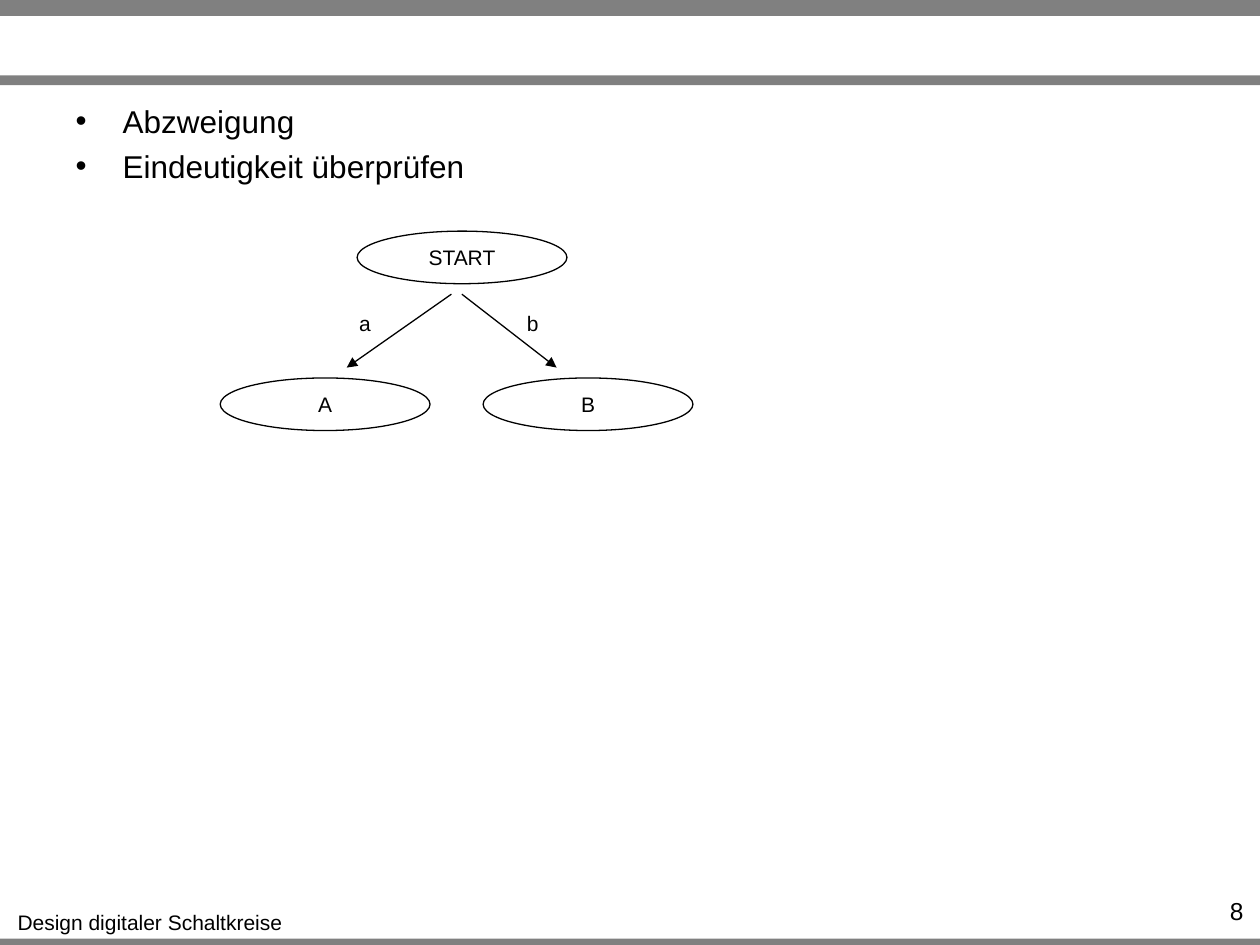
from dataclasses import dataclass

from lxml import etree
from pptx import Presentation
from pptx.dml.color import RGBColor
from pptx.enum import shapes, text
from pptx.oxml import ns
from pptx.util import Cm, Pt

BLACK = RGBColor(0x00, 0x00, 0x00)
GREY = RGBColor(0x80, 0x80, 0x80)
FONT = "Arial"
SLIDE_WIDTH, SLIDE_HEIGHT = 25.4, 19.05
STATE_WIDTH, STATE_HEIGHT = 4.23, 1.06
BULLET_INDENT = Cm(0.95)


@dataclass
class Bar:
    top: float
    height: float


@dataclass
class State:
    name: str
    left: float
    top: float


@dataclass
class Transition:
    start: tuple[float, float]
    end: tuple[float, float]


@dataclass
class Label:
    wording: str
    left: float
    top: float
    width: float
    height: float
    size: int = 12
    alignment: text.PP_ALIGN = text.PP_ALIGN.CENTER
    wrap: bool = False


BARS = [Bar(18.92, 0.13), Bar(0, 0.32), Bar(1.52, 0.2)]
BULLETS = ["Abzweigung", "Eindeutigkeit überprüfen"]
STATES = [State("START", 7.2, 4.66), State("A", 4.44, 7.62), State("B", 9.74, 7.62)]
TRANSITIONS = [
    Transition((9.1, 5.93), (6.99, 7.41)),
    Transition((9.31, 5.93), (11.22, 7.41)),
]
LABELS = [
    Label("Design digitaler Schaltkreise", 0.08, 18.22, 5.89, 0.76),
    Label("a", 6.99, 6.14, 0.74, 0.76),
    Label("b", 10.37, 6.14, 0.74, 0.76),
    Label("8", 23.11, 17.93, 2.21, 0.61, 14, text.PP_ALIGN.RIGHT, True),
]


def format_paragraph(paragraph, size: int, alignment: text.PP_ALIGN) -> None:
    paragraph.alignment = alignment
    paragraph.font.name = FONT
    paragraph.font.size = Pt(size)
    paragraph.font.color.rgb = BLACK


def draw_bar(slide, bar: Bar) -> None:
    shape = slide.shapes.add_shape(
        shapes.MSO_SHAPE.RECTANGLE, 0, Cm(bar.top), Cm(SLIDE_WIDTH), Cm(bar.height)
    )
    shape.shadow.inherit = False
    shape.fill.solid()
    shape.fill.fore_color.rgb = GREY
    shape.line.fill.background()


def fill_body(slide, bullets: list[str]) -> None:
    body = slide.placeholders[1]
    body.left, body.top, body.width, body.height = Cm(1.27), Cm(1.93), Cm(22.86), Cm(5.05)
    frame = body.text_frame
    frame.text = "\n".join(bullets)
    for index, paragraph in enumerate(frame.paragraphs):
        properties = paragraph._p.get_or_add_pPr()
        properties.set("marL", str(BULLET_INDENT))
        properties.set("indent", str(-BULLET_INDENT))
        paragraph.space_before = Pt(4.2 if index else 0)
        etree.SubElement(properties, ns.qn("a:buChar")).set("char", "•")
        format_paragraph(paragraph, 18, text.PP_ALIGN.LEFT)


def draw_state(slide, state: State) -> None:
    shape = slide.shapes.add_shape(
        shapes.MSO_SHAPE.OVAL,
        Cm(state.left), Cm(state.top), Cm(STATE_WIDTH), Cm(STATE_HEIGHT),
    )
    shape.shadow.inherit = False
    shape.fill.background()
    shape.line.color.rgb = BLACK
    shape.line.width = Pt(0.75)
    frame = shape.text_frame
    frame.text = state.name
    frame.vertical_anchor = text.MSO_ANCHOR.MIDDLE
    format_paragraph(frame.paragraphs[0], 12, text.PP_ALIGN.CENTER)


def draw_transition(slide, transition: Transition) -> None:
    connector = slide.shapes.add_connector(
        shapes.MSO_CONNECTOR.STRAIGHT,
        *(Cm(value) for value in transition.start + transition.end),
    )
    connector.line.color.rgb = BLACK
    connector.line.width = Pt(0.75)
    line = connector.line._get_or_add_ln()
    etree.SubElement(line, ns.qn("a:tailEnd")).set("type", "triangle")
    etree.SubElement(connector._element.spPr, ns.qn("a:effectLst"))


def draw_label(slide, label: Label) -> None:
    box = slide.shapes.add_textbox(
        Cm(label.left), Cm(label.top), Cm(label.width), Cm(label.height)
    )
    frame = box.text_frame
    frame.word_wrap = label.wrap
    frame.text = label.wording
    format_paragraph(frame.paragraphs[0], label.size, label.alignment)


def main() -> None:
    presentation = Presentation()
    presentation.slide_width = Cm(SLIDE_WIDTH)
    presentation.slide_height = Cm(SLIDE_HEIGHT)
    slide = presentation.slides.add_slide(presentation.slide_layouts[1])
    title = slide.shapes.title.element
    title.getparent().remove(title)

    for bar in BARS:
        draw_bar(slide, bar)
    fill_body(slide, BULLETS)
    for state in STATES:
        draw_state(slide, state)
    for transition in TRANSITIONS:
        draw_transition(slide, transition)
    for label in LABELS:
        draw_label(slide, label)
    presentation.save("out.pptx")


if __name__ == "__main__":
    main()
